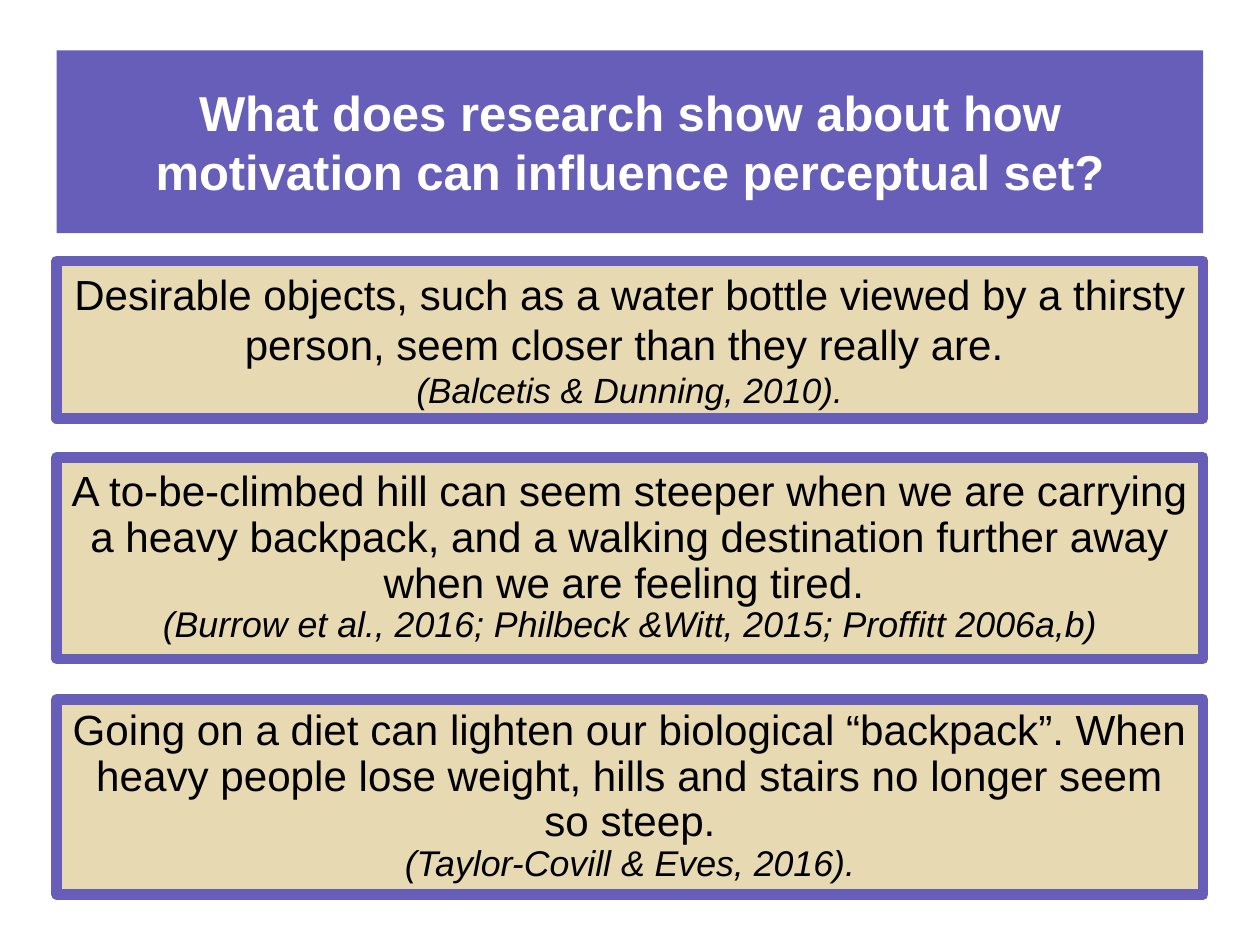
from lxml.etree import SubElement
from pptx import Presentation
from pptx.dml.color import RGBColor
from pptx.enum.shapes import MSO_SHAPE
from pptx.enum.text import MSO_ANCHOR, PP_ALIGN
from pptx.oxml.ns import qn
from pptx.util import Inches, Pt

PURPLE, SAND, WHITE, BLACK = "665EB8", "E7D9B1", "FFFFFF", "000000"
LEFT, WIDTH = 0.45, 9.1

CARDS = [
    (2.07, 1.25, 24, 20, 1.0,
     "Desirable objects, such as a water bottle viewed by a thirsty person, "
     "seem closer than they really are. ",
     "(Balcetis & Dunning, 2010)."),
    (3.63, 1.6, 24.1, 20.4, 0.9,
     "A to-be-climbed hill can seem steeper when we are carrying a heavy "
     "backpack, and a walking destination further away when we are feeling tired. ",
     "(Burrow et al., 2016; Philbeck &Witt, 2015; Proffitt 2006a,b)"),
    (5.55, 1.55, 24.1, 20.4, 0.9,
     "Going on a diet can lighten our biological “backpack”. When heavy people "
     "lose weight, hills and stairs no longer seem so steep.",
     "(Taylor-Covill & Eves, 2016)."),
]


def paint(part, color):
    part.solid()
    part.fore_color.rgb = RGBColor.from_string(color)


def write(para, text, size=24, color=BLACK, bold=False, italic=False, space=1.0):
    para.alignment = PP_ALIGN.CENTER
    para.line_spacing = space
    run = para.add_run()
    run.text = text
    font = run.font
    font.name, font.size = "Arial", Pt(size)
    font.bold, font.italic = bold, italic
    paint(font.fill, color)


def panel(slide, box, fill):
    shape = slide.shapes.add_shape(MSO_SHAPE.RECTANGLE, *map(Inches, box))
    shape.shadow.inherit = False
    paint(shape.fill, fill)
    shape.line.fill.background()
    frame = shape.text_frame
    frame.word_wrap = True
    frame.vertical_anchor = MSO_ANCHOR.MIDDLE
    return shape


def title(slide, box):
    shape = panel(slide, box, PURPLE)
    write(shape.text_frame.paragraphs[0],
          "What does research show about how motivation can influence perceptual set?",
          size=28, color=WHITE, bold=True)


def card(slide, box, claim, cite, big, small, space):
    shape = panel(slide, box, SAND)
    paint(shape.line.fill, PURPLE)
    shape.line.width = Pt(6)
    SubElement(shape.line._ln, qn("a:round"))
    frame = shape.text_frame
    write(frame.paragraphs[0], claim, size=big, space=space)
    write(frame.add_paragraph(), cite, size=small, italic=True, space=space)


def main():
    deck = Presentation()
    deck.slide_width, deck.slide_height = Inches(10), Inches(7.5)
    slide = deck.slides.add_slide(deck.slide_layouts[6])
    paint(slide.background.fill, WHITE)
    title(slide, (LEFT, 0.4, WIDTH, 1.45))
    for top, height, big, small, space, claim, cite in CARDS:
        card(slide, (LEFT, top, WIDTH, height), claim, cite, big, small, space)
    deck.save("out.pptx")


if __name__ == "__main__":
    main()
